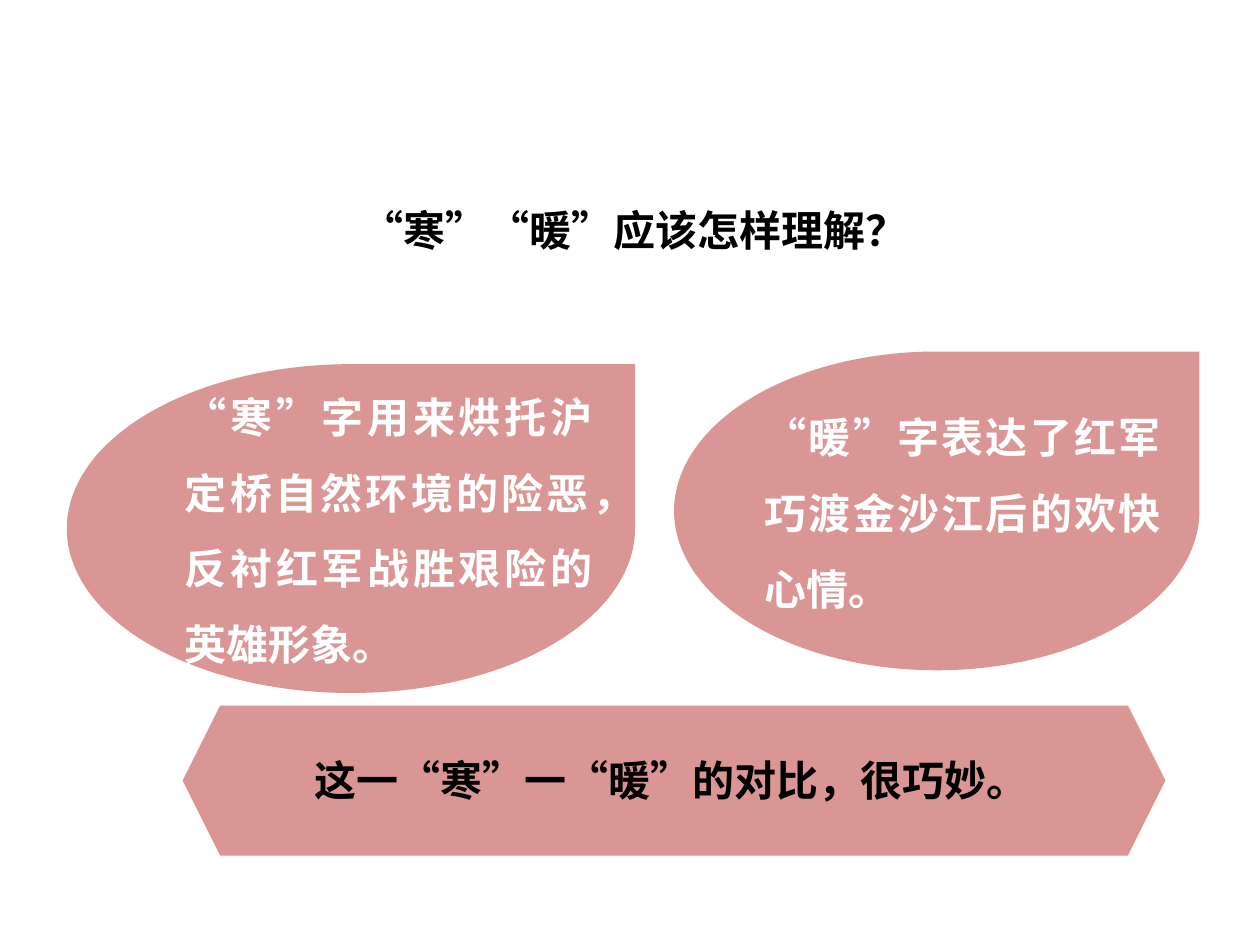
import pptx
import pptx.util
import pptx.dml.color
import pptx.enum.lang
import pptx.enum.shapes
import pptx.enum.text
from lxml import etree

Inches = pptx.util.Inches
SHAPE = pptx.enum.shapes.MSO_SHAPE
ANCHOR = pptx.enum.text.MSO_ANCHOR
FONT = "Noto Sans CJK SC"
DRAWING_NS = "{http://schemas.openxmlformats.org/drawingml/2006/main}"
ROSE, WHITE, BLACK = "D99694", "FFFFFF", "000000"

panels = [
    (SHAPE.TEAR, (0.53, 2.89, 4.51, 2.61)),
    (SHAPE.TEAR, (5.35, 2.79, 4.17, 2.53)),
    (SHAPE.HEXAGON, (1.45, 5.6, 7.8, 1.19)),
]
# text, place, first-line indent
headlines = [
    ("“寒”“暖”应该怎样理解？", (2.77, 1.57, 4.83, 0.5), 0),
    ("这一“寒”一“暖”的对比，很巧妙。", (2.11, 5.94, 6.16, 0.5), 0.29),
]
explanations = [
    ("“寒”字用来烘托沪定桥自然环境的险恶，反衬红军战胜艰险的英雄形象。",
     (1.37, 2.86, 3.43, 2.52)),
    ("“暖”字表达了红军巧渡金沙江后的欢快心情。", (5.97, 3.02, 3.34, 1.92)),
]


def rgb(color):
    return pptx.dml.color.RGBColor.from_string(color)


def add_text(slide, text, place, color, wrap):
    """Add a bold one-paragraph text box and return its frame."""
    frame = slide.shapes.add_textbox(*map(Inches, place)).text_frame
    frame.word_wrap = wrap
    frame.text = text
    run = frame.paragraphs[0].runs[0]
    run.font.size = pptx.util.Pt(24)
    run.font.bold = True
    run.font.color.rgb = rgb(color)
    run.font.language_id = pptx.enum.lang.MSO_LANGUAGE_ID.SIMPLIFIED_CHINESE
    run.font.name = FONT
    east_asian = etree.SubElement(run.font._element, DRAWING_NS + "ea")
    east_asian.set("typeface", FONT)
    return frame


def main():
    deck = pptx.Presentation()
    deck.slide_width, deck.slide_height = Inches(10), Inches(7.5)
    slide = deck.slides.add_slide(deck.slide_layouts[6])

    for kind, place in panels:
        panel = slide.shapes.add_shape(kind, *map(Inches, place))
        panel.shadow.inherit = False
        panel.fill.solid()
        panel.fill.fore_color.rgb = rgb(ROSE)
        panel.line.fill.background()

    for text, place, indent in headlines:
        frame = add_text(slide, text, place, BLACK, wrap=False)
        frame.vertical_anchor = ANCHOR.MIDDLE
        if indent:
            properties = frame.paragraphs[0]._p.get_or_add_pPr()
            properties.set("indent", str(Inches(indent)))

    for text, place in explanations:
        frame = add_text(slide, text, place, WHITE, wrap=True)
        frame.paragraphs[0].alignment = pptx.enum.text.PP_ALIGN.JUSTIFY
        frame.paragraphs[0].line_spacing = 1.5

    deck.save("out.pptx")


if __name__ == "__main__":
    main()
